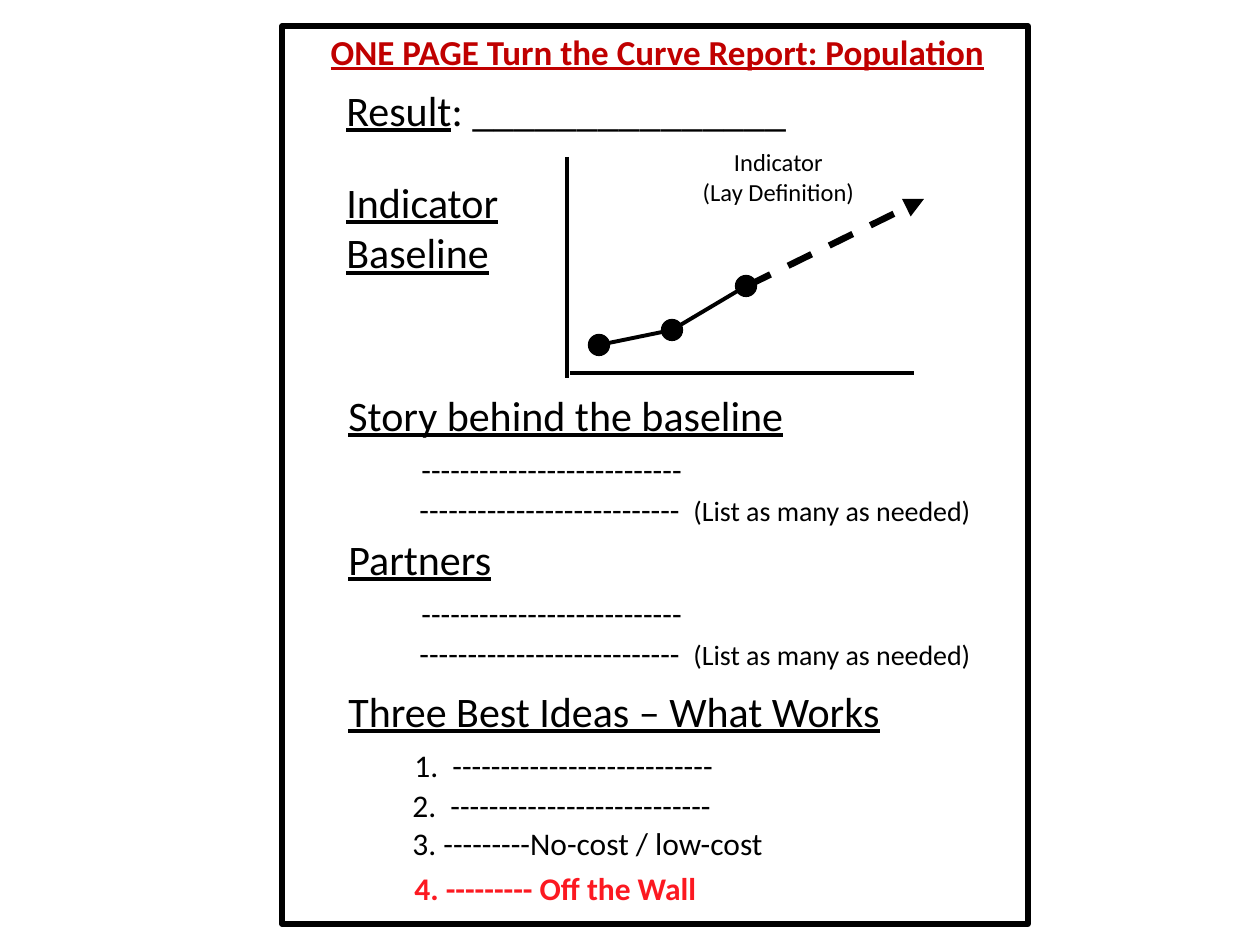
from dataclasses import dataclass
from itertools import pairwise

from lxml.etree import SubElement
from pptx import Presentation
from pptx.dml.color import RGBColor as Rgb
from pptx.enum.dml import MSO_LINE_DASH_STYLE as Dash
from pptx.enum.shapes import MSO_CONNECTOR_TYPE as Link, MSO_SHAPE as Form
from pptx.enum.text import MSO_AUTO_SIZE as Fit, PP_ALIGN as Align
from pptx.oxml.ns import qn
from pptx.util import Pt

SCALE = 914400 / 126


def px(num):
    return round(num * SCALE)


@dataclass(frozen=True)
class Theme:
    font: str = "Calibri"
    ink: Rgb = Rgb(0, 0, 0)
    title: Rgb = Rgb(0xC0, 0, 0)
    alert: Rgb = Rgb(0xFC, 0x19, 0x21)
    head: int = 24
    top: int = 20
    body: int = 18
    hint: int = 16
    label: int = 14


def put(para, text, size, color, font, bold=False, under=False):
    run = para.add_run()
    run.text = text
    run.font.name = font
    run.font.size = Pt(size)
    run.font.bold = bold
    run.font.underline = under
    run.font.color.rgb = color


class Page:
    def __init__(self, deck, theme):
        self.theme = theme
        self.slide = deck.slides.add_slide(deck.slide_layouts[6])
        self.shapes = self.slide.shapes

    def box(self, x, y, w, h):
        frame = self.shapes.add_textbox(px(x), px(y), px(w), px(h)).text_frame
        frame.word_wrap = True
        frame.auto_size = Fit.SHAPE_TO_FIT_TEXT
        return frame

    def words(self, para, text, size, color=None, **form):
        put(para, text, size, color or self.theme.ink, self.theme.font, **form)

    def text(self, area, lines, size, align=Align.LEFT, **form):
        frame = self.box(*area)
        for num, line in enumerate(lines):
            para = frame.add_paragraph() if num else frame.paragraphs[0]
            para.alignment = align
            self.words(para, line, size, **form)
        return frame

    def row(self, frame, text, stops, hint="", lead=False):
        para = frame.add_paragraph()
        para.space_before = Pt(5.7 if lead else 0)
        para.space_after = Pt(1.6 if lead else 0)
        tabs = SubElement(para._p.get_or_add_pPr(), qn("a:tabLst"))
        for stop in stops:
            SubElement(tabs, qn("a:tab"), pos=str(px(stop)), algn="l")
        self.words(para, text, self.theme.body)
        if hint:
            self.words(para, hint, self.theme.hint)

    def line(self, start, end, width, arrow=False):
        link = self.shapes.add_connector(
            Link.STRAIGHT, *map(px, start), *map(px, end))
        link.line.color.rgb = self.theme.ink
        link.line.width = Pt(width)
        props = link._element.spPr
        if arrow:
            link.line.dash_style = Dash.DASH
            SubElement(props.find(qn("a:ln")), qn("a:tailEnd"), type="triangle")
        SubElement(props, qn("a:effectLst"))

    def shape(self, form, x, y, w, h, width, fill=False):
        item = self.shapes.add_shape(form, px(x), px(y), px(w), px(h))
        item.shadow.inherit = False
        item.line.color.rgb = self.theme.ink
        item.line.width = Pt(width)
        if fill:
            item.fill.solid()
            item.fill.fore_color.rgb = self.theme.ink
        else:
            item.fill.background()

    def dot(self, x, y, size=21):
        self.shape(Form.FLOWCHART_CONNECTOR, x - size / 2, y - size / 2,
                   size, size, 0.75, fill=True)


def main():
    deck = Presentation()
    deck.slide_width, deck.slide_height = px(1260), px(945)
    theme = Theme()
    page = Page(deck, theme)

    page.text((282, 24, 751, 55), ["ONE PAGE Turn the Curve Report: Population"],
              theme.top, Align.CENTER, color=theme.title, bold=True, under=True)
    result = page.text((334, 78, 701, 63), ["Result"], theme.head, under=True)
    page.words(result.paragraphs[0], ": _______________", theme.head)

    page.line((567, 157), (567, 378), 2.5)
    page.line((570, 373), (914, 373), 2.5)
    dots = [(599, 345), (672, 330), (746, 286)]
    for dot in dots:
        page.dot(*dot)
    for start, end in pairwise(dots):
        page.line(start, end, 2.25)
    page.line((747, 286), (924, 199), 3.75, arrow=True)

    page.text((645, 141, 267, 72), ["Indicator", "(Lay Definition)"],
              theme.label, Align.CENTER)
    page.text((334, 170, 213, 113), ["Indicator", "Baseline"],
              theme.head, under=True)
    page.shape(Form.RECTANGLE, 282, 26, 746, 898, 3)

    dash = "-" * 27
    for top, head in [(383, "Story behind the baseline"), (527, "Partners")]:
        frame = page.text((336, top, 688, 155), [head], theme.head, under=True)
        page.row(frame, f"\t{dash}", [73], lead=True)
        page.row(frame, f"\t{dash}\t", [71, 345], "(List as many as needed)")

    ideas = page.text((336, 679, 688, 198), ["Three Best Ideas – What Works"],
                      theme.head, under=True)
    page.row(ideas, f"\t1.\t{dash}", [66, 104], lead=True)
    page.row(ideas, f"\t2.\t{dash}", [64, 102])
    page.row(ideas, "\t3. ---------No-cost / low-cost", [64])
    page.text((402, 863, 481, 54), ["4. --------- Off the Wall"],
              theme.body, color=theme.alert, bold=True)

    deck.save("out.pptx")


if __name__ == "__main__":
    main()
